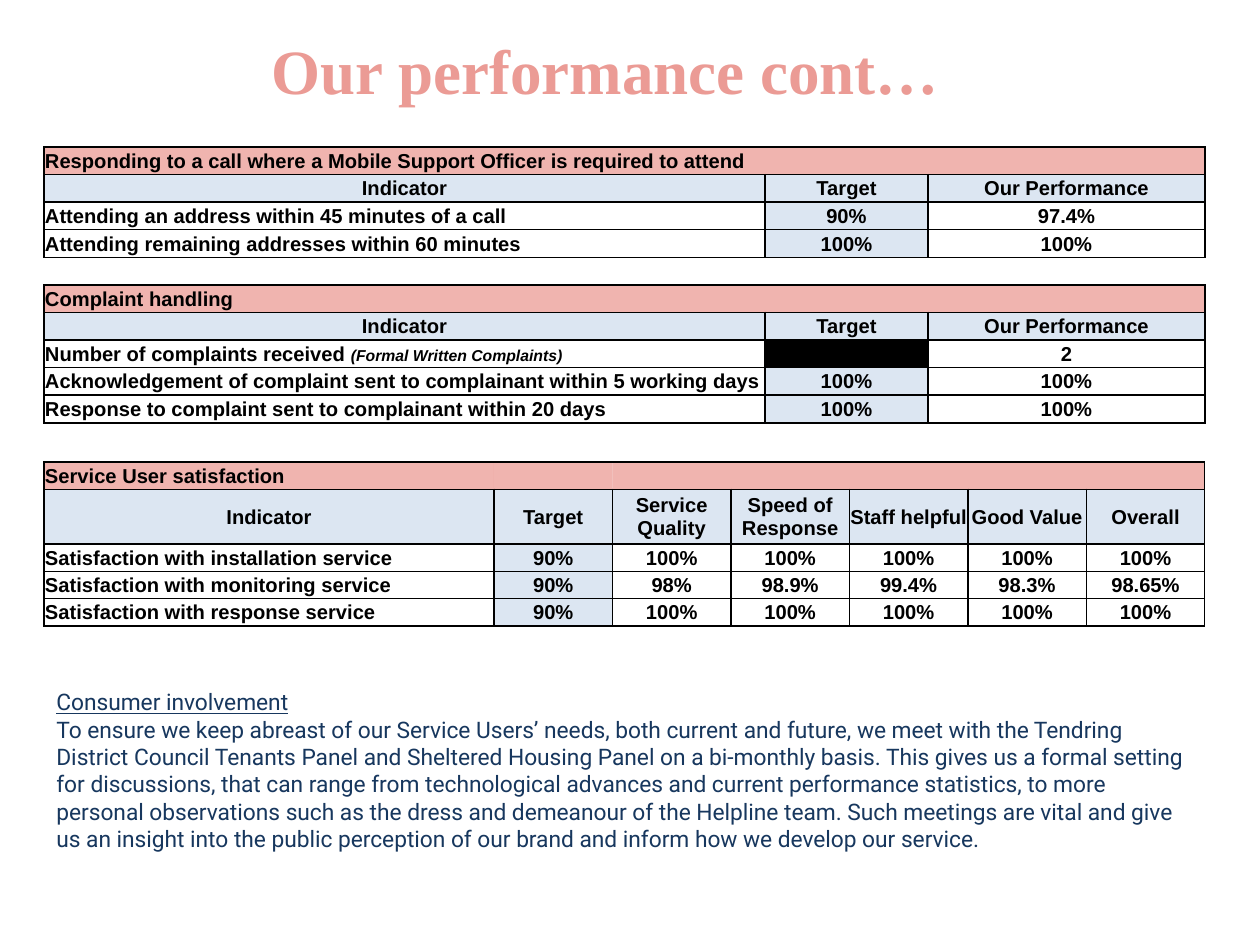
from dataclasses import dataclass

from lxml.etree import SubElement
from pptx import Presentation
from pptx.dml.color import RGBColor
from pptx.enum.text import MSO_ANCHOR, MSO_AUTO_SIZE, PP_ALIGN
from pptx.oxml.ns import qn
from pptx.util import Emu, Pt

SCALE = 914400 / 126
COLORS = {
    "coral": "EB9B95",
    "pale": "DCE6F2",
    "black": "000000",
    "navy": "17375E",
}


@dataclass(frozen=True)
class Run:
    text: str
    size: float = 11.5
    font: str = "Arial"
    color: str = "black"
    bold: bool = True
    italic: bool = False
    underline: bool = False


@dataclass(frozen=True)
class Cell:
    runs: tuple[Run, ...] = ()
    fill: str = ""
    alpha: int = 100
    centered: bool = True
    span: int = 1
    sides: str = "LRTB"


@dataclass(frozen=True)
class Grid:
    left: int
    top: int
    width: int
    height: int
    cols: tuple[int, ...]
    heights: tuple[int, ...]
    rows: tuple[tuple[Cell, ...], ...]


def px(n: float) -> Emu:
    return Emu(round(n * SCALE))


def banner(text: str = "", span: int = 1, sides: str = "LRTB") -> Cell:
    runs = (Run(text),) if text else ()
    return Cell(runs, "coral", 75, False, span, sides)


def headings(*labels: str) -> tuple[Cell, ...]:
    return tuple(Cell((Run(label),), "pale") for label in labels)


def measure(label: str, target: str, *values: str, note: str = "") -> tuple[Cell, ...]:
    runs = (Run(label),) + ((Run(note, size=9, italic=True),) if note else ())
    goal = Cell((Run(target),), "pale") if target else Cell(fill="black")
    return (Cell(runs, centered=False), goal, *(Cell((Run(v),)) for v in values))


def add_run(p, run: Run) -> None:
    r = p.add_run()
    r.text = run.text
    f = r.font
    f.size, f.name = Pt(run.size), run.font
    f.bold, f.italic, f.underline = run.bold, run.italic, run.underline
    f.color.rgb = RGBColor.from_string(COLORS[run.color])


def add_text(s, left: int, top: int, width: int, height: int,
             paragraphs: list[Run], align: PP_ALIGN) -> None:
    tf = s.shapes.add_textbox(px(left), px(top), px(width), px(height)).text_frame
    tf.word_wrap = True
    tf.auto_size = MSO_AUTO_SIZE.SHAPE_TO_FIT_TEXT
    for i, run in enumerate(paragraphs):
        p = tf.add_paragraph() if i else tf.paragraphs[0]
        p.alignment = align
        add_run(p, run)


def set_borders(tc, sides: str) -> None:
    pr = tc.get_or_add_tcPr()
    for side in "LRTB":
        ln = SubElement(pr, qn(f"a:ln{side}"), w=str(Pt(1)))
        if side in sides:
            fill = SubElement(ln, qn("a:solidFill"))
            SubElement(fill, qn("a:srgbClr"), val=COLORS["black"])
        else:
            SubElement(ln, qn("a:noFill"))


def style_cell(cell, data: Cell) -> None:
    cell.margin_left = cell.margin_right = cell.margin_top = px(1)
    cell.margin_bottom = 0
    cell.vertical_anchor = MSO_ANCHOR.MIDDLE
    set_borders(cell._tc, data.sides)
    if data.fill:
        cell.fill.solid()
        cell.fill.fore_color.rgb = RGBColor.from_string(COLORS[data.fill])
        if data.alpha < 100:
            color = cell._tc.tcPr.find(f".//{qn('a:solidFill')}[last()]")
            color = cell._tc.tcPr.find(f"{qn('a:solidFill')}/{qn('a:srgbClr')}")
            SubElement(color, qn("a:alpha"), val=str(data.alpha * 1000))
    else:
        cell.fill.background()
    p = cell.text_frame.paragraphs[0]
    p.alignment = PP_ALIGN.CENTER if data.centered else PP_ALIGN.LEFT
    for run in data.runs:
        add_run(p, run)
    if not data.runs:
        p._p.get_or_add_endParaRPr().set("sz", "1150")


def add_grid(s, grid: Grid) -> None:
    table = s.shapes.add_table(len(grid.heights), len(grid.cols), px(grid.left),
                               px(grid.top), px(grid.width), px(grid.height)).table
    table.first_row = table.horz_banding = False
    for col, weight in zip(table.columns, grid.cols):
        col.width = px(grid.width * weight / sum(grid.cols))
    for row, weight in zip(table.rows, grid.heights):
        row.height = px(grid.height * weight / sum(grid.heights))
    for i, cells in enumerate(grid.rows):
        j = 0
        for data in cells:
            for k in range(j, j + data.span):
                shown = data if k == j else Cell(
                    fill=data.fill, alpha=data.alpha, sides=data.sides)
                style_cell(table.cell(i, k), shown)
            if data.span > 1:
                table.cell(i, j).merge(table.cell(i, j + data.span - 1))
            j += data.span


RESPONSE_HEADINGS = headings("Indicator", "Target", "Our Performance")
RESPONSE = Grid(
    44, 147, 1161, 276, (721, 163, 277), (1,) * 10,
    (
        (banner("Responding to a call where a Mobile Support Officer is required to attend", 3),),
        RESPONSE_HEADINGS,
        measure("Attending an address within 45 minutes of a call", "90%", "97.4%"),
        measure("Attending remaining addresses within 60 minutes", "100%", "100%"),
        (Cell(sides="TB"),) * 3,
        (banner("Complaint handling", 3),),
        RESPONSE_HEADINGS,
        measure("Number of complaints received ", "", "2", note="(Formal Written Complaints)"),
        measure("Acknowledgement of complaint sent to complainant within 5 working days",
                "100%", "100%"),
        measure("Response to complaint sent to complainant within 20 days", "100%", "100%"),
    ),
)
SATISFACTION = Grid(
    44, 462, 1161, 164, (900,) + (237,) * 6, (1, 2, 1, 1, 1),
    (
        (banner("Service User satisfaction", sides="LTB"), banner(sides="TB"),
         banner(span=5, sides="RTB")),
        headings("Indicator", "Target", "Service Quality", "Speed of Response",
                 "Staff helpful", "Good Value", "Overall"),
        measure("Satisfaction with installation service", "90%", *["100%"] * 5),
        measure("Satisfaction with monitoring service", "90%",
                "98%", "98.9%", "99.4%", "98.3%", "98.65%"),
        measure("Satisfaction with response service", "90%", *["100%"] * 5),
    ),
)
INVOLVEMENT = (
    "To ensure we keep abreast of our Service Users’ needs, both current and future, "
    "we meet with the Tendring District Council Tenants Panel and Sheltered Housing Panel "
    "on a bi-monthly basis. This gives us a formal setting for discussions, that can range "
    "from technological advances and current performance statistics, to more personal "
    "observations such as the dress and demeanour of the Helpline team. Such meetings are "
    "vital and give us an insight into the public perception of our brand and inform how "
    "we develop our service."
)


def main() -> None:
    prs = Presentation()
    prs.slide_width, prs.slide_height = px(1260), px(945)
    s = prs.slides.add_slide(prs.slide_layouts[6])
    add_text(s, 184, 25, 843, 89,
             [Run("Our performance cont…", 36, "Times New Roman", "coral")], PP_ALIGN.CENTER)
    for grid in (RESPONSE, SATISFACTION):
        add_grid(s, grid)
    add_text(s, 44, 682, 1161, 178,
             [Run("Consumer involvement", 13, "Roboto", "navy", False, underline=True),
              Run(INVOLVEMENT, 13, "Roboto", "navy", False)], PP_ALIGN.LEFT)
    prs.save("out.pptx")


if __name__ == "__main__":
    main()
